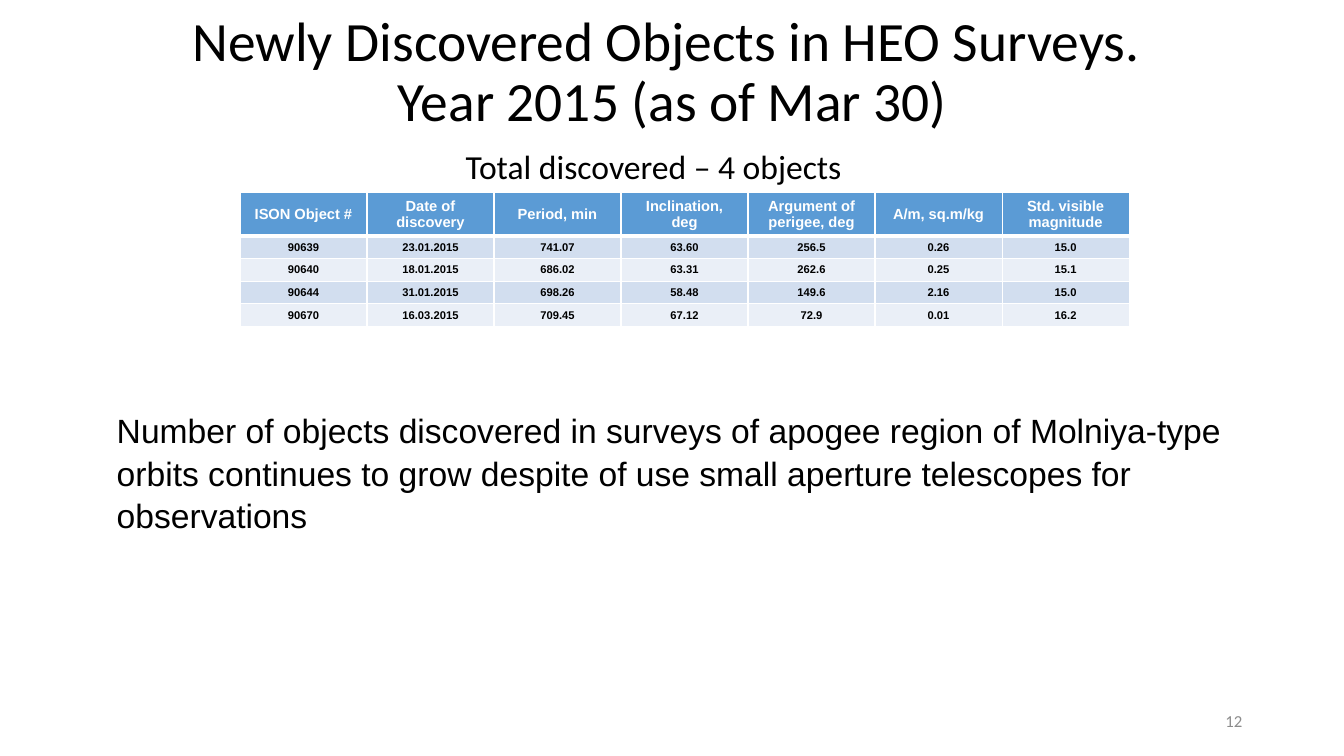
from dataclasses import dataclass

from lxml import etree
from pptx import Presentation
from pptx.dml.color import RGBColor
from pptx.enum.text import MSO_ANCHOR, MSO_AUTO_SIZE, PP_ALIGN
from pptx.oxml.ns import qn
from pptx.util import Inches, Pt

LEFT, CENTER, RIGHT = PP_ALIGN.LEFT, PP_ALIGN.CENTER, PP_ALIGN.RIGHT
TOP, MIDDLE = MSO_ANCHOR.TOP, MSO_ANCHOR.MIDDLE
NO_AUTOFIT = MSO_AUTO_SIZE.NONE
TITLE_ONLY_LAYOUT = 5


@dataclass(frozen=True)
class Theme:
    heading_font: str = "Calibri"
    body_font: str = "Arial"
    text: str = "000000"
    page_number: str = "8C8C8C"
    header_text: str = "FFFFFF"
    header_fill: str = "5B9BD5"
    band_fills: tuple = ("D2DEEF", "EAEFF7")
    grid: str = "FFFFFF"
    title_size: float = 39.6
    text_size: float = 24
    page_number_size: float = 12
    header_size: float = 10.5
    cell_size: float = 8


THEME = Theme()

TITLE_LINES = ["Newly Discovered Objects in HEO Surveys. ", "Year 2015 (as of Mar 30)"]
CONCLUSION_LINES = [
    "Number of objects discovered in surveys of apogee region of Molniya-type",
    "orbits continues to grow despite of use small aperture telescopes for",
    "observations",
]
DISCOVERIES = [
    ["ISON Object #", "Date of discovery", "Period, min", "Inclination, deg",
     "Argument of perigee, deg", "A/m, sq.m/kg", "Std. visible magnitude"],
    ["90639", "23.01.2015", "741.07", "63.60", "256.5", "0.26", "15.0"],
    ["90640", "18.01.2015", "686.02", "63.31", "262.6", "0.25", "15.1"],
    ["90644", "31.01.2015", "698.26", "58.48", "149.6", "2.16", "15.0"],
    ["90670", "16.03.2015", "709.45", "67.12", "72.9", "0.01", "16.2"],
]


def add_run(paragraph, text, font, size, color, bold=False):
    run = paragraph.add_run()
    run.text = text
    run.font.name = font
    run.font.size = Pt(size)
    run.font.bold = bold
    run.font.color.rgb = RGBColor.from_string(color)


def set_title(slide):
    title = slide.shapes.title
    title.left, title.top = Inches(0.92), Inches(0.22)
    title.width, title.height = Inches(11.5), Inches(1.02)
    frame = title.text_frame
    frame.auto_size = NO_AUTOFIT
    frame.vertical_anchor = MIDDLE
    paragraph = frame.paragraphs[0]
    paragraph.alignment = CENTER
    paragraph.line_spacing = 0.9
    for index, line in enumerate(TITLE_LINES):
        if index:
            paragraph.add_line_break()
        add_run(paragraph, line, THEME.heading_font, THEME.title_size, THEME.text)


def add_text(slide, box, lines, font, size, color, align=LEFT, anchor=TOP, spacing=1.0):
    frame = slide.shapes.add_textbox(*map(Inches, box)).text_frame
    frame.word_wrap = False
    frame.vertical_anchor = anchor
    for index, line in enumerate(lines):
        paragraph = frame.add_paragraph() if index else frame.paragraphs[0]
        paragraph.alignment = align
        paragraph.line_spacing = spacing
        add_run(paragraph, line, font, size, color)


def set_borders(cell, bottom_width):
    """Draw the white grid; borders must come before the fill in tcPr."""
    properties = cell._tc.get_or_add_tcPr()
    widths = {"a:lnL": 1, "a:lnR": 1, "a:lnT": 1, "a:lnB": bottom_width}
    for index, (side, width) in enumerate(widths.items()):
        line = etree.Element(qn(side), w=str(Pt(width)))
        fill = etree.SubElement(line, qn("a:solidFill"))
        etree.SubElement(fill, qn("a:srgbClr"), val=THEME.grid)
        properties.insert(index, line)


def fill_cell(cell, text, is_header, fill):
    cell.vertical_anchor = MIDDLE
    cell.margin_top = cell.margin_bottom = Inches(0.04)
    cell.fill.solid()
    cell.fill.fore_color.rgb = RGBColor.from_string(fill)
    paragraph = cell.text_frame.paragraphs[0]
    paragraph.alignment = CENTER
    size = THEME.header_size if is_header else THEME.cell_size
    color = THEME.header_text if is_header else THEME.text
    add_run(paragraph, text, THEME.body_font, size, color, bold=True)
    set_borders(cell, 3 if is_header else 1)


def add_discoveries_table(slide):
    row_count, column_count = len(DISCOVERIES), len(DISCOVERIES[0])
    column_width, header_height, row_height = 1.26, 0.42, 0.225
    table = slide.shapes.add_table(
        row_count, column_count, Inches(2.38), Inches(1.91),
        Inches(column_width * column_count),
        Inches(header_height + row_height * (row_count - 1))).table
    for column in table.columns:
        column.width = Inches(column_width)
    for row_index, values in enumerate(DISCOVERIES):
        is_header = row_index == 0
        table.rows[row_index].height = Inches(header_height if is_header else row_height)
        fill = THEME.header_fill if is_header else THEME.band_fills[(row_index - 1) % 2]
        for column_index, value in enumerate(values):
            fill_cell(table.cell(row_index, column_index), value, is_header, fill)


def main():
    prs = Presentation()
    prs.slide_width, prs.slide_height = Inches(13.33), Inches(7.5)
    slide = prs.slides.add_slide(prs.slide_layouts[TITLE_ONLY_LAYOUT])
    set_title(slide)
    add_text(slide, (9.42, 6.95, 3, 0.4), ["12"], THEME.heading_font,
             THEME.page_number_size, THEME.page_number, RIGHT, MIDDLE)
    add_discoveries_table(slide)
    add_text(slide, (4.52, 1.4, 3.97, 0.5), ["Total discovered – 4 objects"],
             THEME.heading_font, THEME.text_size, THEME.text)
    add_text(slide, (1.06, 4, 11.36, 1.31), CONCLUSION_LINES,
             THEME.body_font, THEME.text_size, THEME.text, spacing=1.05)
    prs.save("out.pptx")


if __name__ == "__main__":
    main()
